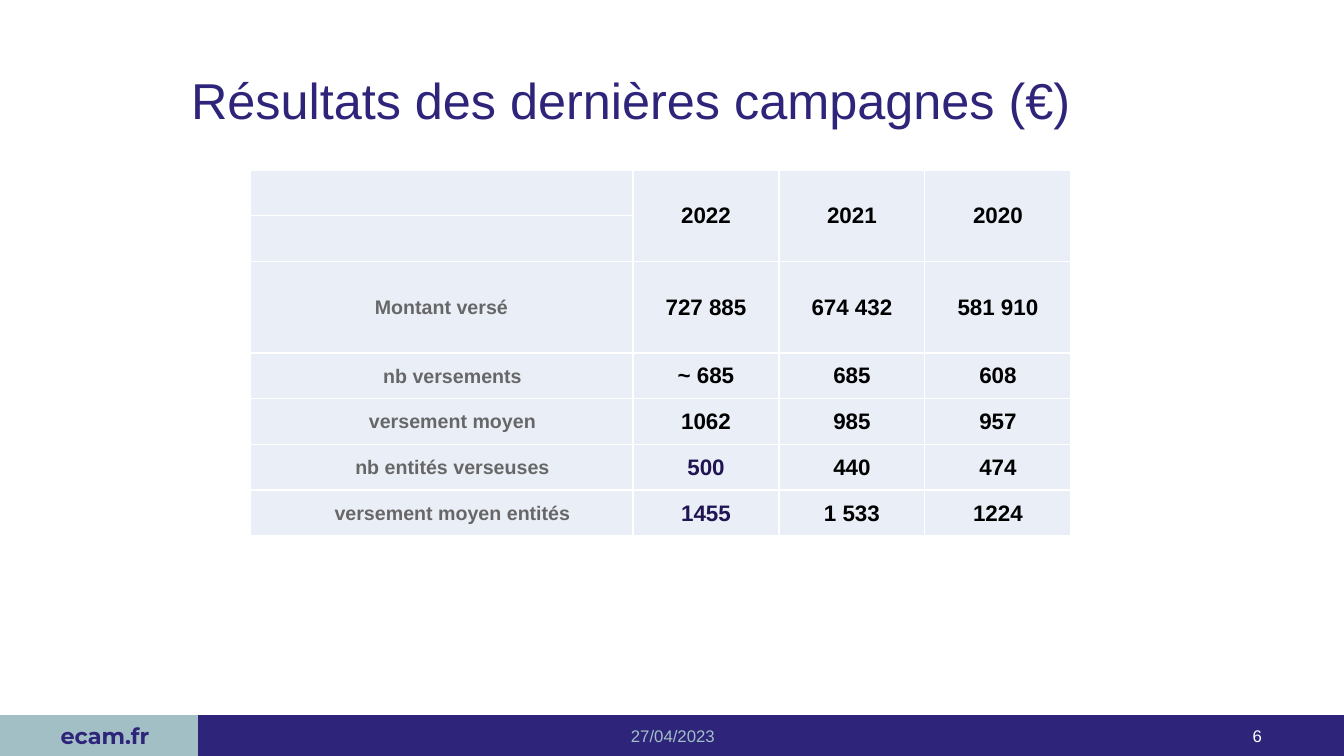
from dataclasses import dataclass

from lxml.etree import SubElement
from pptx import Presentation
from pptx.dml.color import RGBColor
from pptx.enum.shapes import MSO_SHAPE
from pptx.enum.text import MSO_ANCHOR, PP_ALIGN
from pptx.oxml.ns import qn
from pptx.util import Pt

EMU_PER_PX = 914400 / 100.8
NAVY, SAGE, WHITE, PALE = "2E247A", "A2BFC6", "FFFFFF", "EAEFF7"
GREY, BLACK, DARK_VIOLET = "676768", "000000", "211452"


@dataclass
class Box:
    left: int
    top: int
    width: int
    height: int
    text: str = ""
    size: int = 12
    color: str = NAVY
    align: PP_ALIGN = PP_ALIGN.LEFT
    fill: str = ""
    font: str = "Arial"
    bold: bool = False
    margin_left: int = 10
    line_spacing: float = 1.0


@dataclass
class Result:
    label: str
    values: tuple[str, str, str]
    indent: int = 23
    latest_color: str = BLACK


BOXES = [
    Box(198, 715, 1146, 41, fill=NAVY),
    Box(0, 715, 198, 41, "ecam.fr", 16, align=PP_ALIGN.CENTER, fill=SAGE,
        font="Montserrat", bold=True, margin_left=22),
    Box(181, 30, 1082, 146, "Résultats des dernières campagnes (€)", 36,
        line_spacing=0.9),
    Box(446, 716, 454, 40, "27/04/2023", color=SAGE, align=PP_ALIGN.CENTER),
    Box(970, 716, 302, 40, "6", color=WHITE, align=PP_ALIGN.RIGHT),
]

YEARS = ("2022", "2021", "2020")
RESULTS = [
    Result("Montant versé", ("727 885", "674 432", "581 910"), indent=1),
    Result("nb versements", ("~ 685", "685", "608")),
    Result("versement moyen", ("1062", "985", "957")),
    Result("nb entités verseuses", ("500", "440", "474"), latest_color=DARK_VIOLET),
    Result("versement moyen entités", ("1455", "1 533", "1224"), latest_color=DARK_VIOLET),
]
HEADER_ROWS = 2
ROW_SHARES = (1, 1, 2, 1, 1, 1, 1)
COLUMN_WIDTHS = (383, 146, 146, 146)
TABLE_LEFT, TABLE_TOP, TABLE_HEIGHT = 250, 170, 366


def px(length: float) -> int:
    return round(length * EMU_PER_PX)


def rgb(color: str) -> RGBColor:
    return RGBColor.from_string(color)


def apply(target, values: dict) -> None:
    for name, value in values.items():
        setattr(target, name, value)


def write(frame, text: str, size: int, color: str, align: PP_ALIGN,
          font: str = "Arial", bold: bool = False) -> None:
    paragraph = frame.paragraphs[0]
    paragraph.alignment = align
    run = paragraph.add_run()
    run.text = text
    apply(run.font, {"name": font, "size": Pt(size), "bold": bold})
    run.font.color.rgb = rgb(color)


def draw_box(slide, box: Box) -> None:
    place = [px(n) for n in (box.left, box.top, box.width, box.height)]
    if box.fill:
        shape = slide.shapes.add_shape(MSO_SHAPE.RECTANGLE, *place)
        shape.shadow.inherit = False
        shape.fill.solid()
        shape.fill.fore_color.rgb = rgb(box.fill)
        shape.line.fill.background()
    else:
        shape = slide.shapes.add_textbox(*place)
    if box.text:
        frame = shape.text_frame
        apply(frame, {"word_wrap": True, "vertical_anchor": MSO_ANCHOR.MIDDLE,
                      "margin_left": px(box.margin_left), "margin_right": px(10)})
        write(frame, box.text, box.size, box.color, box.align, box.font, box.bold)
        frame.paragraphs[0].line_spacing = box.line_spacing


def style_cell(cell) -> None:
    """Give a cell white borders, a pale fill and thin margins."""
    properties = cell._tc.get_or_add_tcPr()
    for side in ("lnL", "lnR", "lnT", "lnB"):
        border = SubElement(properties, qn(f"a:{side}"), w=str(Pt(1)))
        SubElement(SubElement(border, qn("a:solidFill")), qn("a:srgbClr"), val=WHITE)
    cell.fill.solid()
    cell.fill.fore_color.rgb = rgb(PALE)
    apply(cell, {"margin_left": px(1), "margin_right": px(1), "margin_top": px(1),
                 "margin_bottom": 0, "vertical_anchor": MSO_ANCHOR.MIDDLE})


def write_cell(cell, text: str, size: int = 16, color: str = BLACK) -> None:
    write(cell.text_frame, text, size, color, PP_ALIGN.CENTER, bold=True)


def draw_results(slide) -> None:
    table = slide.shapes.add_table(
        len(ROW_SHARES), len(COLUMN_WIDTHS), px(TABLE_LEFT), px(TABLE_TOP),
        px(sum(COLUMN_WIDTHS)), px(TABLE_HEIGHT)).table
    apply(table, {"first_row": False, "horz_banding": False})
    for column, width in zip(table.columns, COLUMN_WIDTHS):
        column.width = px(width)
    for row, share in zip(table.rows, ROW_SHARES):
        row.height = px(TABLE_HEIGHT * share / sum(ROW_SHARES))
    for cell in table.iter_cells():
        style_cell(cell)
    for column, year in enumerate(YEARS, 1):
        heading = table.cell(0, column)
        heading.merge(table.cell(HEADER_ROWS - 1, column))
        write_cell(heading, year)
    for row, result in enumerate(RESULTS, HEADER_ROWS):
        label = table.cell(row, 0)
        label.margin_left = px(result.indent)
        write_cell(label, result.label, 14, GREY)
        for column, value in enumerate(result.values, 1):
            color = result.latest_color if column == 1 else BLACK
            write_cell(table.cell(row, column), value, color=color)


def main() -> None:
    deck = Presentation()
    apply(deck, {"slide_width": px(1344), "slide_height": px(756)})
    slide = deck.slides.add_slide(deck.slide_layouts[6])
    for box in BOXES:
        draw_box(slide, box)
    draw_results(slide)
    deck.save("out.pptx")


if __name__ == "__main__":
    main()
